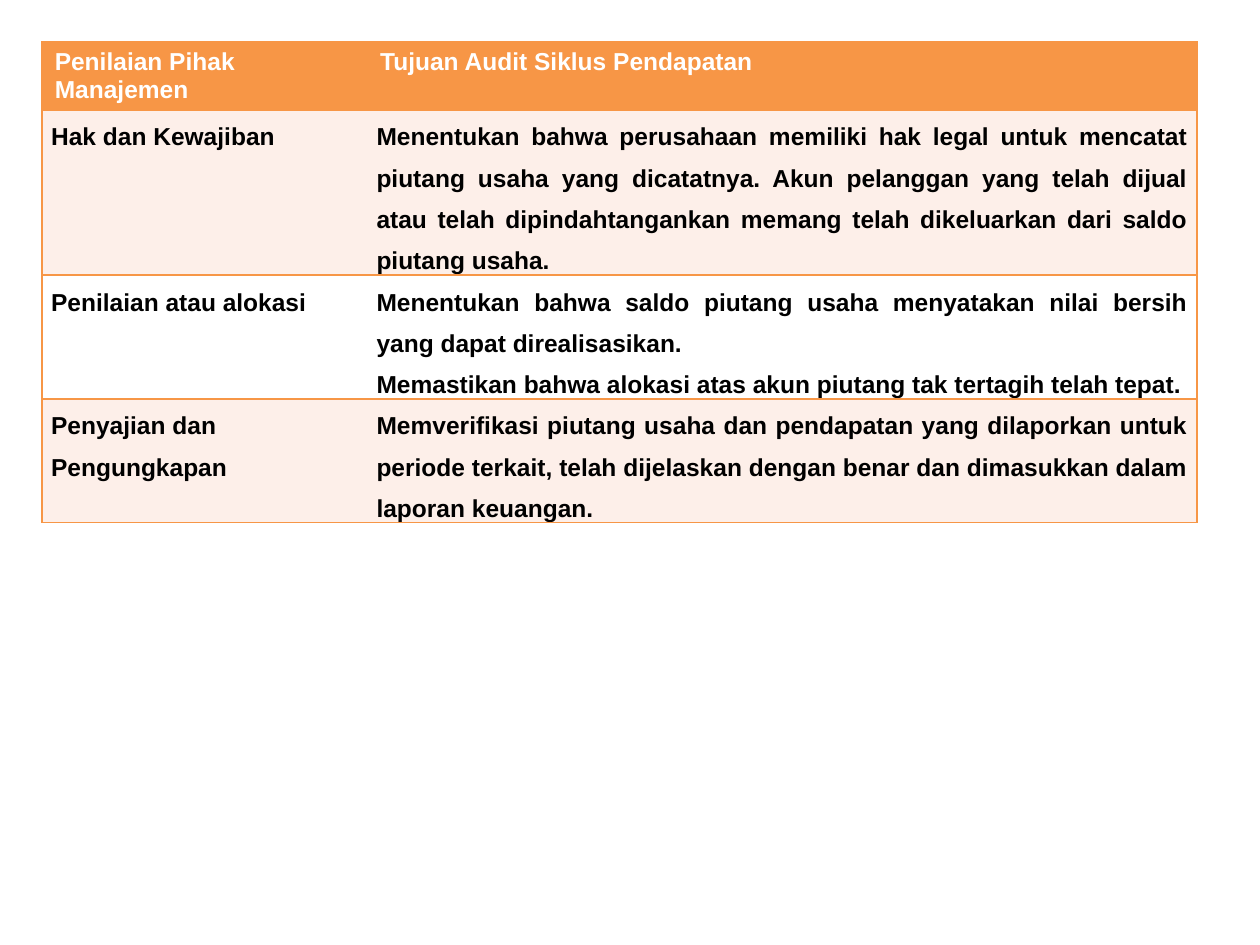
from lxml.etree import SubElement
from pptx import Presentation
from pptx.dml.color import RGBColor
from pptx.enum.text import PP_ALIGN as Align
from pptx.oxml.ns import qn
from pptx.util import Cm, Pt

COLORS = {
    "orange": "F79646",
    "peach": "FDEFE9",
    "white": "FFFFFF",
    "black": "000000",
}

# Each cell holds a list of paragraphs
ROWS = [
    (["Penilaian Pihak Manajemen"], ["Tujuan Audit Siklus Pendapatan"]),
    (
        ["Hak dan Kewajiban"],
        ["Menentukan bahwa perusahaan memiliki hak legal untuk mencatat piutang "
         "usaha yang dicatatnya. Akun pelanggan yang telah dijual atau telah "
         "dipindahtangankan memang telah dikeluarkan dari saldo piutang usaha."],
    ),
    (
        ["Penilaian atau alokasi"],
        ["Menentukan bahwa saldo piutang usaha menyatakan nilai bersih yang dapat "
         "direalisasikan.",
         "Memastikan bahwa alokasi atas akun piutang tak tertagih telah tepat."],
    ),
    (
        ["Penyajian dan Pengungkapan"],
        ["Memverifikasi piutang usaha dan pendapatan yang dilaporkan untuk periode "
         "terkait, telah dijelaskan dengan benar dan dimasukkan dalam laporan "
         "keuangan."],
    ),
]
COLUMN_WIDTHS = [Cm(6.56), Cm(16.72)]
TABLE_HEIGHT = Cm(10.34)


def set_borders(cell, visible_sides):
    properties = cell._tc.get_or_add_tcPr()
    for side in "LRTB":
        line = SubElement(properties, qn(f"a:ln{side}"), w=str(Pt(1)))
        if side in visible_sides:
            fill = SubElement(line, qn("a:solidFill"))
            SubElement(fill, qn("a:srgbClr"), val=COLORS["orange"])
        else:
            SubElement(line, qn("a:noFill"))


presentation = Presentation()
presentation.slide_width = Cm(25.4)
presentation.slide_height = Cm(19.05)
slide = presentation.slides.add_slide(presentation.slide_layouts[6])

# Table grid; rows grow with their text
frame = slide.shapes.add_table(
    len(ROWS), len(COLUMN_WIDTHS), Cm(0.85), Cm(0.85), sum(COLUMN_WIDTHS), TABLE_HEIGHT
)
table = frame.table
for column, width in zip(table.columns, COLUMN_WIDTHS):
    column.width = width
for row in table.rows:
    row.height = Cm(1.06)
frame.height = TABLE_HEIGHT

# Cells
for row_index, row_texts in enumerate(ROWS):
    is_header = row_index == 0
    if is_header:
        fill_color, text_color = "orange", "white"
    else:
        fill_color = "peach" if row_index % 2 else "white"
        text_color = "black"

    for column_index, texts in enumerate(row_texts):
        cell = table.cell(row_index, column_index)
        set_borders(cell, "LTB" if column_index == 0 else "RTB")
        cell.fill.solid()
        cell.fill.fore_color.rgb = RGBColor.from_string(COLORS[fill_color])
        if not is_header:
            cell.margin_left = cell.margin_right = Cm(0.18)
            cell.margin_top = cell.margin_bottom = 0

        cell.text = "\n".join(texts)
        is_last_label = row_index == len(ROWS) - 1 and column_index == 0
        for paragraph in cell.text_frame.paragraphs:
            if not is_header:
                paragraph.line_spacing = 1.5
                paragraph.alignment = Align.LEFT if is_last_label else Align.JUSTIFY
            font = paragraph.font
            font.name = "Arial"
            font.size = Pt(14)
            font.bold = True
            font.color.rgb = RGBColor.from_string(COLORS[text_color])

presentation.save("out.pptx")
